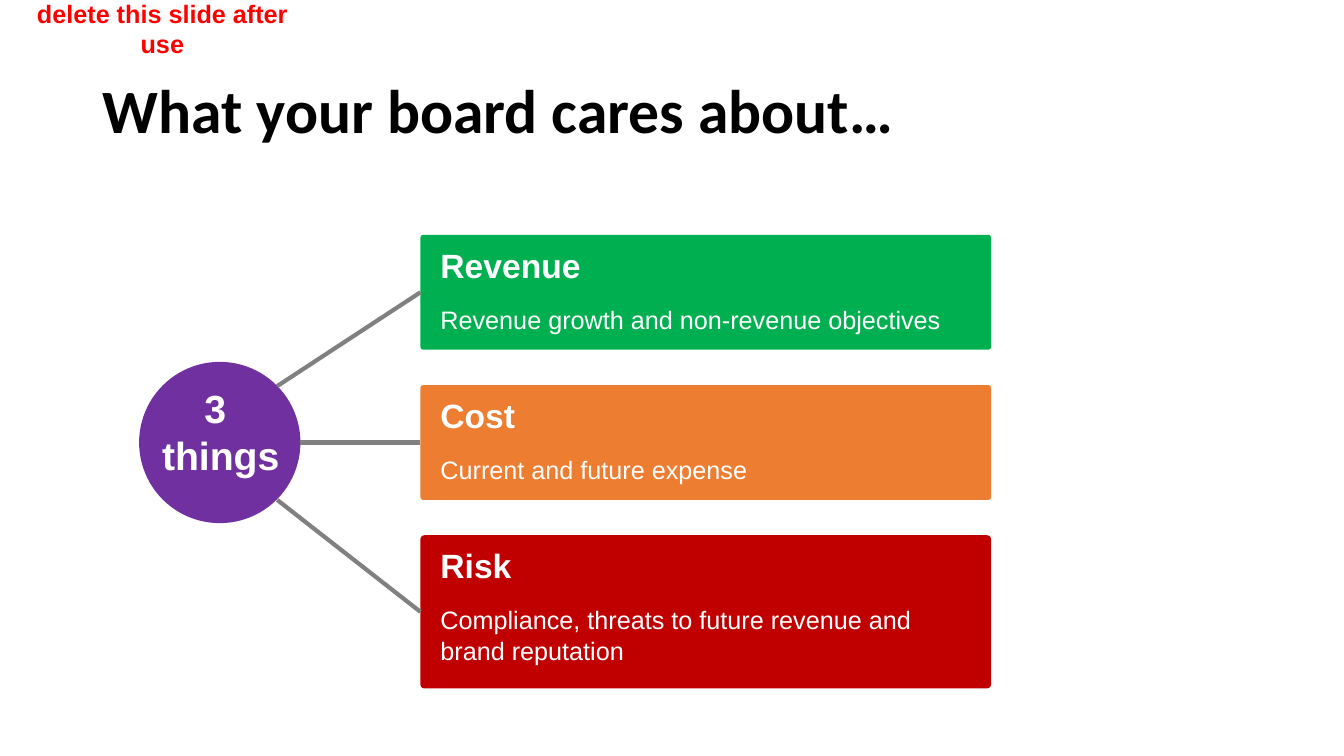
from dataclasses import dataclass

from lxml import etree
from pptx import Presentation
from pptx.dml.color import RGBColor
from pptx.enum.shapes import MSO_CONNECTOR, MSO_SHAPE
from pptx.enum.text import MSO_ANCHOR, MSO_AUTO_SIZE, PP_ALIGN
from pptx.oxml.ns import qn
from pptx.shapes.autoshape import Shape
from pptx.slide import Slide
from pptx.util import Inches, Pt

BLACK = RGBColor(0x00, 0x00, 0x00)
WHITE = RGBColor(0xFF, 0xFF, 0xFF)
RED = RGBColor(0xFF, 0x00, 0x00)
PURPLE = RGBColor(0x70, 0x30, 0xA0)
GREY = RGBColor(0x80, 0x80, 0x80)
GREEN = RGBColor(0x00, 0xB0, 0x50)
ORANGE = RGBColor(0xED, 0x7D, 0x31)
DARK_RED = RGBColor(0xC0, 0x00, 0x00)

OVAL = MSO_SHAPE.OVAL
ROUNDED = MSO_SHAPE.ROUNDED_RECTANGLE
STRAIGHT = MSO_CONNECTOR.STRAIGHT
LEFT, CENTER = PP_ALIGN.LEFT, PP_ALIGN.CENTER
TOP, MIDDLE = MSO_ANCHOR.TOP, MSO_ANCHOR.MIDDLE

TITLE_ONLY_LAYOUT = 5
LEFT_SIDE = 1
CARD_LEFT, CARD_TOP, CARD_WIDTH, CARD_PITCH = 4.17, 2.33, 5.66, 1.49
TEXT_LEFT = 4.27


@dataclass(frozen=True)
class Box:
    left: float
    top: float
    width: float
    height: float

    def lengths(self) -> tuple[int, int, int, int]:
        return (Inches(self.left), Inches(self.top),
                Inches(self.width), Inches(self.height))


@dataclass(frozen=True)
class Concern:
    heading: str
    heading_width: float
    detail: str
    detail_width: float
    height: float
    color: RGBColor
    spoke_start: tuple[float, float]
    detail_height: float = 0.4
    wraps: bool = False


CONCERNS = (
    Concern("Revenue", 1.61, "Revenue growth and non-revenue objectives", 5.33,
            1.14, GREEN, (2.75, 3.83)),
    Concern("Cost", 0.95, "Current and future expense", 3.27,
            1.14, ORANGE, (2.98, 4.39)),
    Concern("Risk", 0.91,
            "Compliance, threats to future revenue and brand reputation", 5.33,
            1.52, DARK_RED, (2.75, 4.96), detail_height=0.71, wraps=True),
)


def add_filled(slide: Slide, preset: MSO_SHAPE, box: Box, color: RGBColor) -> Shape:
    shape = slide.shapes.add_shape(preset, *box.lengths())
    shape.shadow.inherit = False
    shape.fill.solid()
    shape.fill.fore_color.rgb = color
    shape.line.fill.background()
    return shape


def add_text(slide: Slide, box: Box, lines: tuple[str, ...], size: int,
             color: RGBColor = WHITE, bold: bool = True, align: PP_ALIGN = LEFT,
             anchor: MSO_ANCHOR = TOP, wraps: bool = False) -> None:
    frame = slide.shapes.add_textbox(*box.lengths()).text_frame
    frame.word_wrap = wraps
    frame.auto_size = MSO_AUTO_SIZE.SHAPE_TO_FIT_TEXT
    frame.vertical_anchor = anchor
    frame.text = "\n".join(lines)
    for paragraph in frame.paragraphs:
        paragraph.alignment = align
        font = paragraph.font
        font.name, font.size, font.bold = "Arial", Pt(size), bold
        font.color.rgb = color


def add_spoke(slide: Slide, start: tuple[float, float], card: Shape) -> None:
    """Join a point on the hub's rim to the left side of a card."""
    x, y = (Inches(value) for value in start)
    spoke = slide.shapes.add_connector(
        STRAIGHT, x, y, card.left, card.top + card.height // 2)
    spoke.end_connect(card, LEFT_SIDE)
    spoke.line.color.rgb = GREY
    spoke.line.width = Pt(3)
    etree.SubElement(spoke._element.spPr, qn("a:effectLst"))


def add_concern(slide: Slide, concern: Concern, top: float) -> None:
    card = add_filled(slide, ROUNDED,
                      Box(CARD_LEFT, top, CARD_WIDTH, concern.height), concern.color)
    card.adjustments[0] = 0.026
    add_spoke(slide, concern.spoke_start, card)
    add_text(slide, Box(TEXT_LEFT, top + 0.05, concern.heading_width, 0.5),
             (concern.heading,), 24)
    add_text(slide, Box(TEXT_LEFT, top + 0.64, concern.detail_width,
                        concern.detail_height),
             (concern.detail,), 18, bold=False, wraps=concern.wraps)


def set_title(slide: Slide, text: str) -> None:
    title = slide.shapes.title
    title.left, title.top, title.width, title.height = Box(
        0.92, 0.4, 11.5, 1.45).lengths()
    title.text_frame.text = text
    title.text_frame.vertical_anchor = MIDDLE
    paragraph = title.text_frame.paragraphs[0]
    paragraph.alignment = LEFT
    paragraph.line_spacing = 0.9
    font = paragraph.font
    font.name, font.size, font.bold = "Calibri", Pt(44), True
    font.color.rgb = BLACK


def main() -> None:
    presentation = Presentation()
    presentation.slide_width = Inches(13.33)
    presentation.slide_height = Inches(7.5)
    slide = presentation.slides.add_slide(
        presentation.slide_layouts[TITLE_ONLY_LAYOUT])

    set_title(slide, "What your board cares about…")
    add_text(slide, Box(0.02, 0.07, 3.18, 0.43), ("delete this slide after use",),
             18, color=RED, align=CENTER, anchor=MIDDLE)
    add_filled(slide, OVAL, Box(1.38, 3.59, 1.6, 1.6), PURPLE)
    add_text(slide, Box(1.5, 3.76, 1.38, 1.04), ("3 ", "things"), 28, align=CENTER)
    for row, concern in enumerate(CONCERNS):
        add_concern(slide, concern, CARD_TOP + row * CARD_PITCH)

    presentation.save("out.pptx")


if __name__ == "__main__":
    main()
